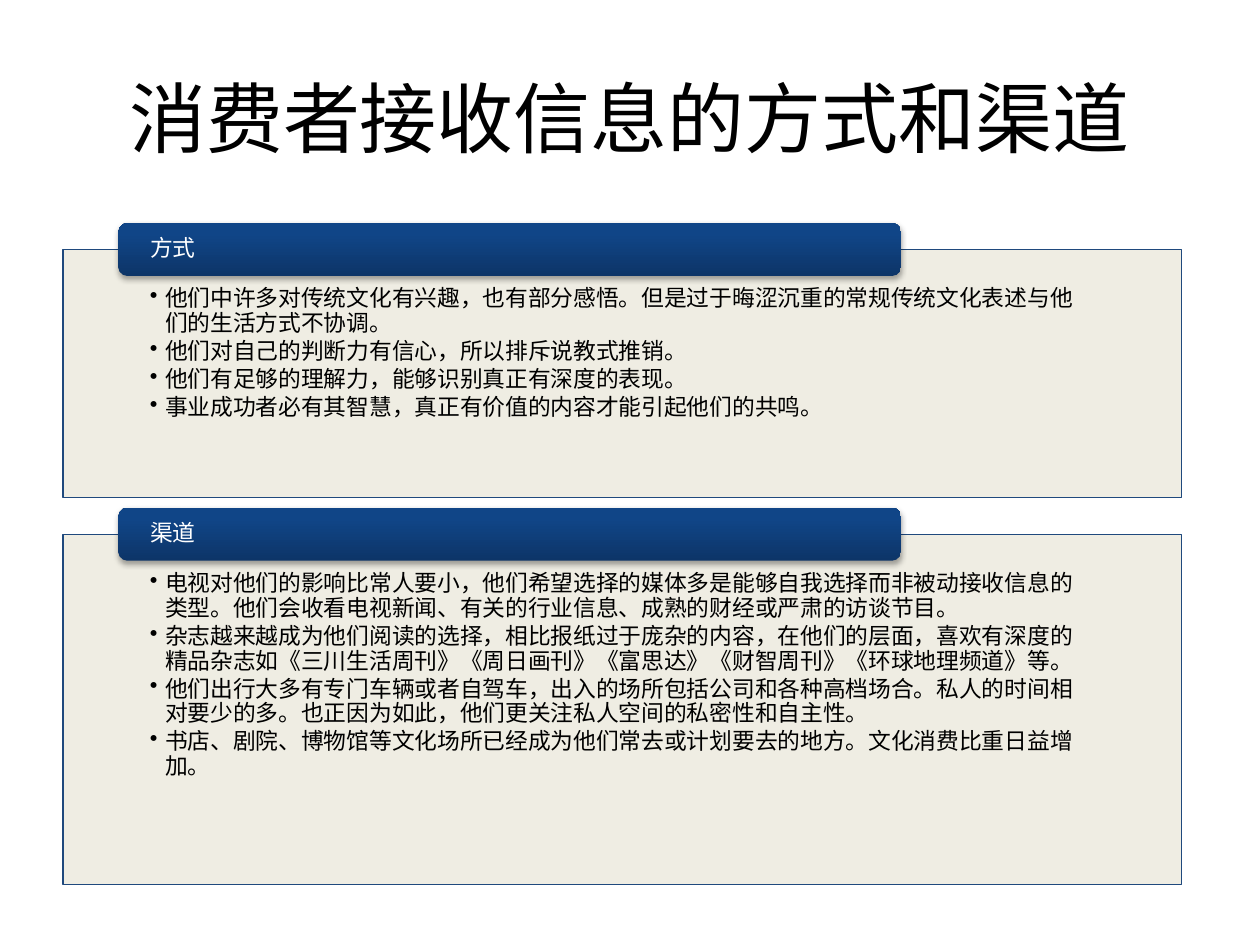
from copy import deepcopy

from lxml import etree
from pptx import Presentation
from pptx.dml.color import RGBColor
from pptx.enum.shapes import MSO_SHAPE as Shape
from pptx.enum.text import MSO_ANCHOR as Anchor, PP_ALIGN as Align
from pptx.oxml.ns import qn
from pptx.util import Inches, Pt

FONT = "Calibri"
COLORS = {
    "text": "000000",
    "header_text": "FFFFFF",
    "panel": "EEECE1",
    "outline": "1F497D",
    "shadow": "000000",
}
HEADER_GRADIENT = [(0, "0D3568"), (0.8, "104587"), (1, "0E458A")]

SECTIONS = [
    ("方式", 1.98, 1.97, [
        "他们中许多对传统文化有兴趣，也有部分感悟。但是过于晦涩沉重的常规传统文化表述与他们的生活方式不协调。",
        "他们对自己的判断力有信心，所以排斥说教式推销。",
        "他们有足够的理解力，能够识别真正有深度的表现。",
        "事业成功者必有其智慧，真正有价值的内容才能引起他们的共鸣。",
    ]),
    ("渠道", 4.24, 2.78, [
        "电视对他们的影响比常人要小，他们希望选择的媒体多是能够自我选择而非被动接收信息的类型。他们会收看电视新闻、有关的行业信息、成熟的财经或严肃的访谈节目。",
        "杂志越来越成为他们阅读的选择，相比报纸过于庞杂的内容，在他们的层面，喜欢有深度的精品杂志如《三川生活周刊》《周日画刊》《富思达》《财智周刊》《环球地理频道》等。",
        "他们出行大多有专门车辆或者自驾车，出入的场所包括公司和各种高档场合。私人的时间相对要少的多。也正因为如此，他们更关注私人空间的私密性和自主性。",
        "书店、剧院、博物馆等文化场所已经成为他们常去或计划要去的地方。文化消费比重日益增加。",
    ]),
]


def set_insets(text_frame, left, top, right, bottom):
    text_frame.margin_left, text_frame.margin_top = Inches(left), Inches(top)
    text_frame.margin_right, text_frame.margin_bottom = Inches(right), Inches(bottom)


def format_paragraph(paragraph, size, color, align=Align.LEFT):
    paragraph.alignment = align
    for run in paragraph.runs:
        run.font.name = FONT
        run.font.size = Pt(size)
        run.font.color.rgb = RGBColor.from_string(COLORS[color])


def add_bullet(paragraph):
    properties = paragraph._p.get_or_add_pPr()
    properties.set("marL", str(Inches(0.12)))
    properties.set("indent", str(Inches(-0.12)))
    etree.SubElement(properties, qn("a:buChar"), char="•")


def fill_header(shape):
    """Apply the three-stop gradient, running from bottom to top."""
    shape.fill.gradient()
    shape.fill.gradient_angle = 90
    stop_list = shape._element.spPr.find(qn("a:gradFill")).find(qn("a:gsLst"))
    stop_list.append(deepcopy(stop_list[-1]))
    for stop, (position, color) in zip(shape.fill.gradient_stops, HEADER_GRADIENT):
        stop.position = position
        stop.color.rgb = RGBColor.from_string(color)


def add_soft_shadow(shape):
    shape.shadow.inherit = False
    effects = shape._element.spPr.find(qn("a:effectLst"))
    shadow = etree.SubElement(
        effects, qn("a:outerShdw"), blurRad=str(Pt(3.1)), dist=str(Pt(1.8)),
        dir="5400000", rotWithShape="0")
    color = etree.SubElement(shadow, qn("a:srgbClr"), val=COLORS["shadow"])
    etree.SubElement(color, qn("a:alpha"), val="35000")


def add_title(slide, text):
    box = slide.shapes.add_textbox(Inches(0.5), Inches(0.3), Inches(9), Inches(1.25))
    text_frame = box.text_frame
    text_frame.word_wrap = True
    text_frame.vertical_anchor = Anchor.MIDDLE
    text_frame.text = text
    format_paragraph(text_frame.paragraphs[0], 44, "text", Align.CENTER)


def add_panel(slide, top, height, items):
    panel = slide.shapes.add_shape(
        Shape.RECTANGLE, Inches(0.5), Inches(top), Inches(8.88), Inches(height))
    panel.shadow.inherit = False
    panel.fill.solid()
    panel.fill.fore_color.rgb = RGBColor.from_string(COLORS["panel"])
    fill_color = panel._element.spPr.find(qn("a:solidFill"))[0]
    etree.SubElement(fill_color, qn("a:alpha"), val="90000")
    panel.line.color.rgb = RGBColor.from_string(COLORS["outline"])
    panel.line.width = Pt(0.75)

    text_frame = panel.text_frame
    text_frame.word_wrap = True
    text_frame.vertical_anchor = Anchor.TOP
    set_insets(text_frame, 0.69, 0.3, 0.69, 0.1)
    text_frame.text = "\n".join(items)
    for paragraph in text_frame.paragraphs:
        add_bullet(paragraph)
        paragraph.line_spacing = 0.9
        paragraph.space_after = Pt(2)
        format_paragraph(paragraph, 13, "text")


def add_header(slide, top, text):
    header = slide.shapes.add_shape(
        Shape.ROUNDED_RECTANGLE, Inches(0.94), Inches(top), Inches(6.21), Inches(0.42))
    fill_header(header)
    header.line.fill.background()
    add_soft_shadow(header)

    text_frame = header.text_frame
    text_frame.word_wrap = True
    text_frame.vertical_anchor = Anchor.MIDDLE
    set_insets(text_frame, 0.23, 0, 0.23, 0)
    text_frame.text = text
    text_frame.paragraphs[0].line_spacing = 0.9
    format_paragraph(text_frame.paragraphs[0], 13, "header_text")


def main():
    presentation = Presentation()
    presentation.slide_width, presentation.slide_height = Inches(10), Inches(7.5)
    slide = presentation.slides.add_slide(presentation.slide_layouts[6])
    add_title(slide, "消费者接收信息的方式和渠道")
    for heading, top, height, items in SECTIONS:
        add_panel(slide, top, height, items)
        add_header(slide, top - 0.21, heading)
    presentation.save("out.pptx")


if __name__ == "__main__":
    main()
